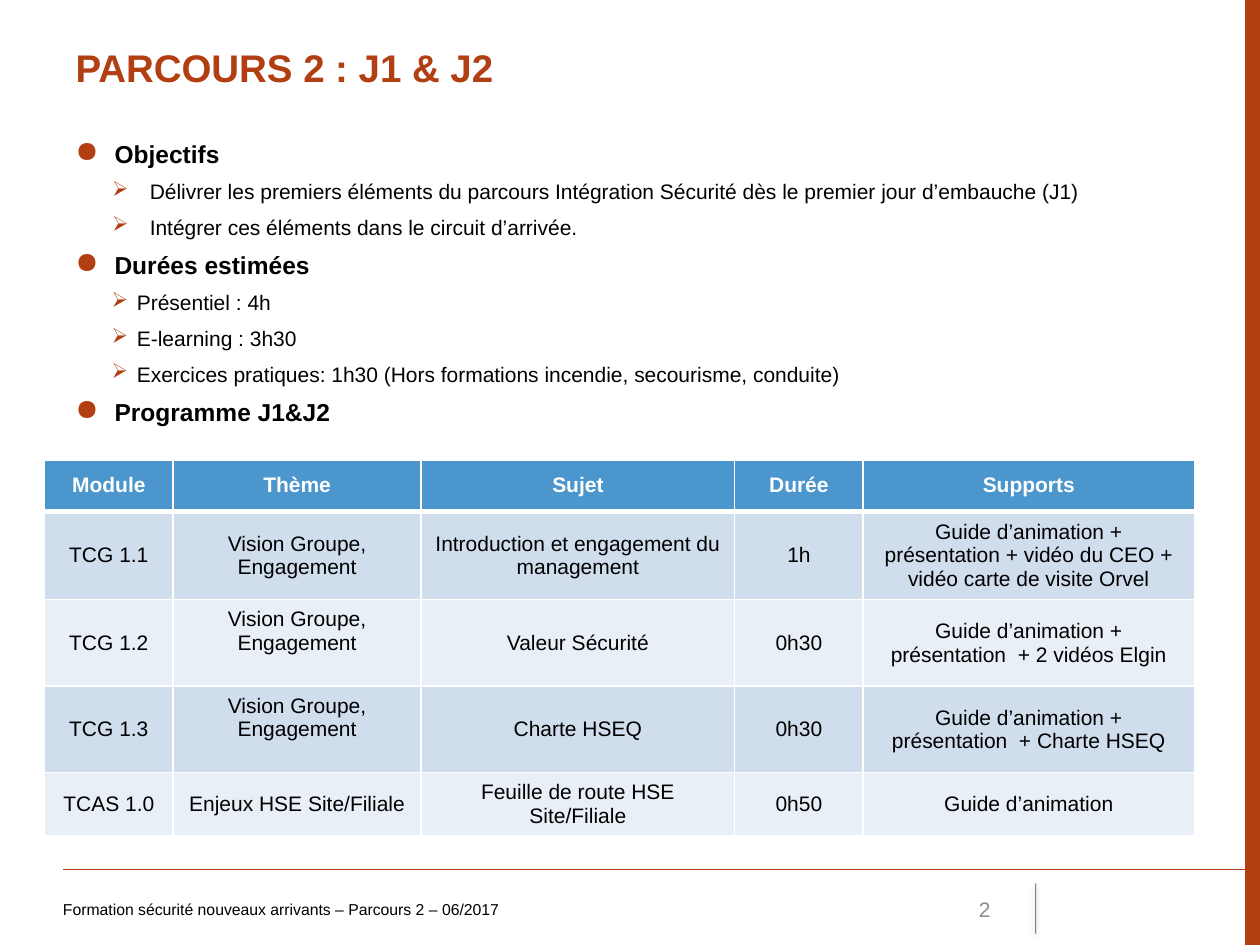
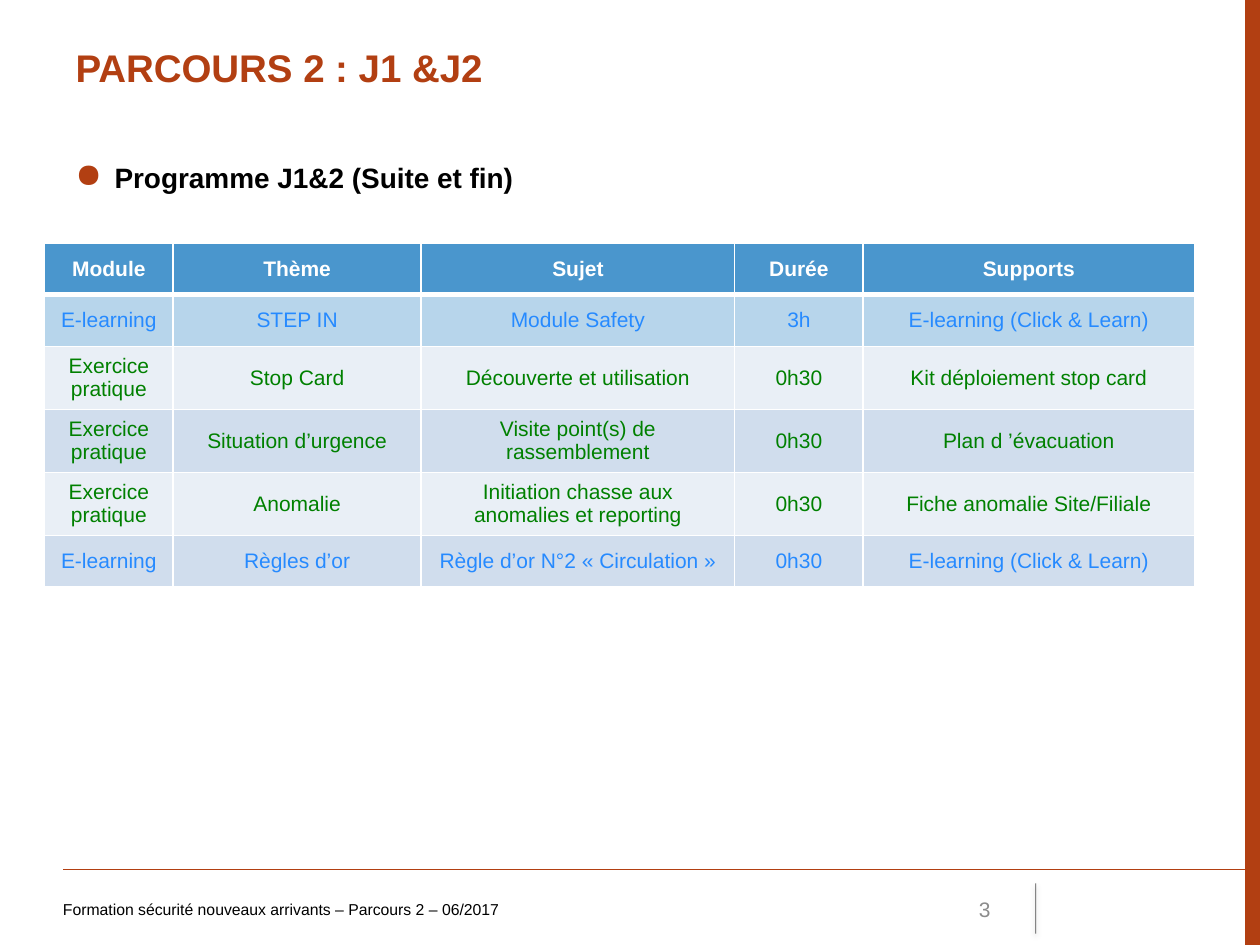
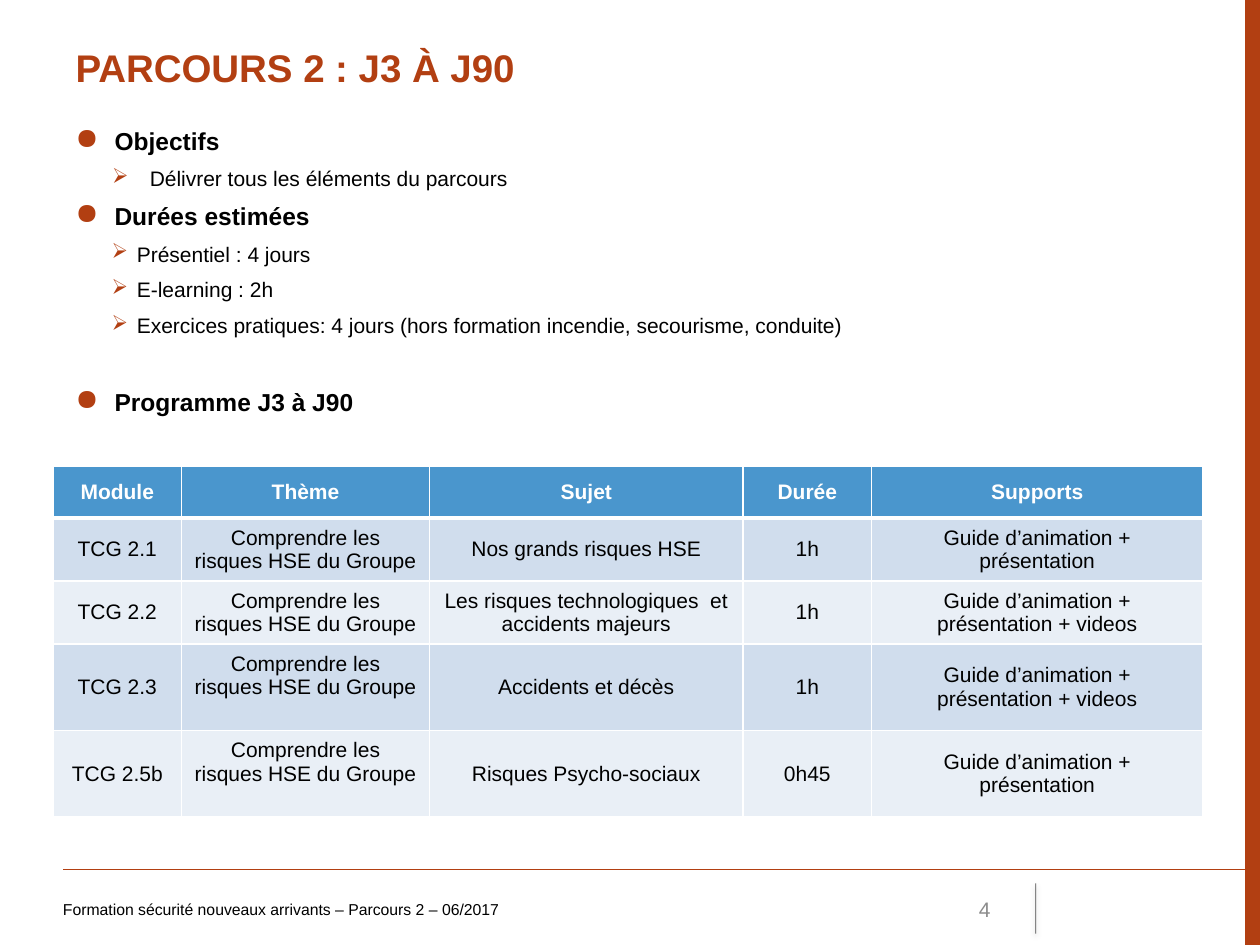
from lxml import etree
from pptx import Presentation
from pptx.dml.color import RGBColor
from pptx.enum import shapes, text
from pptx.oxml import parse_xml
from pptx.oxml.ns import nsdecls
from pptx.util import Cm, Pt

RUST = RGBColor(0xB2, 0x3F, 0x12)
BLACK = RGBColor(0, 0, 0)
WHITE = RGBColor(0xFF, 0xFF, 0xFF)
GREY = RGBColor(0x8C, 0x8C, 0x8C)
HEAD = RGBColor(0x4A, 0x96, 0xCD)
DARK = RGBColor(0xD0, 0xDD, 0xED)
LIGHT = RGBColor(0xE9, 0xEF, 0xF6)
SKY = RGBColor(0xB7, 0xD5, 0xEB)
HUES = {"E-learning": RGBColor(0x26, 0x8A, 0xFF),
        "Exercice pratique": RGBColor(0, 0x80, 0)}

FOOT = "Formation sécurité nouveaux arrivants – Parcours 2 – 06/2017"
HEADS = ("Module", "Thème", "Sujet", "Durée", "Supports")
COLS = (2.59, 5, 6.32, 2.59, 6.68)
FLAT, PAIR, TALL = 1.04, 1.2, 1.67  # row heights for one, two and three lines
RAISE = 0.6  # bottom margin that lifts a theme by half a line

# Bullet levels: left indent, hanging indent (cm), sign, size in percent
LEVELS = {"main": (0.79, 0.79, "●", 120),
          "wide": (1.5, 0.76, "➢", 100),
          "near": (1.24, 0.51, "➢", 100)}

VISION = "Vision Groupe,\nEngagement"
RISKS = "Comprendre les risques HSE du Groupe"
GUIDE = "Guide d’animation + présentation"
CLICK = "E-learning (Click & Learn)"

SLIDES = [
    dict(
        title="PARCOURS 2 : J1 & J2", top=2.67, size=14,
        points=[
            ("main", "Objectifs"),
            ("wide", "Délivrer les premiers éléments du parcours Intégration "
                     "Sécurité dès le premier jour d’embauche (J1)"),
            ("wide", "Intégrer ces éléments dans le circuit d’arrivée."),
            ("main", "Durées estimées"),
            ("near", "Présentiel : 4h"),
            ("near", "E-learning : 3h30"),
            ("near", "Exercices pratiques: 1h30 (Hors formations incendie, "
                     "secourisme, conduite)"),
            ("main", "Programme J1&J2")],
        at=(0.9, 9.27), first=DARK, lifted=(2, 3),
        highs=(FLAT, TALL, TALL, TALL, PAIR),
        rows=[
            ("TCG 1.1", VISION, "Introduction et engagement du management",
             "1h", GUIDE + " + vidéo du CEO + vidéo carte de visite Orvel"),
            ("TCG 1.2", VISION, "Valeur Sécurité", "0h30",
             GUIDE + "  + 2 vidéos Elgin"),
            ("TCG 1.3", VISION, "Charte HSEQ", "0h30",
             GUIDE + "  + Charte HSEQ"),
            ("TCAS 1.0", "Enjeux HSE Site/Filiale",
             "Feuille de route HSE Site/Filiale", "0h50",
             "Guide d’animation")]),
    dict(
        title="PARCOURS 2 : J1 &J2", top=3.12, size=16,
        points=[("main", "Programme J1&2 (Suite et fin)")],
        at=(0.9, 4.9), first=SKY, lifted=(),
        highs=(FLAT, FLAT, PAIR, PAIR, PAIR, FLAT),
        rows=[
            ("E-learning", "STEP IN", "Module Safety", "3h", CLICK),
            ("Exercice pratique", "Stop Card", "Découverte et utilisation",
             "0h30", "Kit déploiement stop card"),
            ("Exercice pratique", "Situation d’urgence",
             "Visite point(s) de rassemblement", "0h30",
             "Plan d ’évacuation"),
            ("Exercice pratique", "Anomalie",
             "Initiation chasse aux anomalies et reporting", "0h30",
             "Fiche anomalie Site/Filiale"),
            ("E-learning", "Règles d’or", "Règle d’or N°2 « Circulation »",
             "0h30", CLICK)]),
    dict(
        title="PARCOURS 2 : J3 À J90", top=2.41, size=14, gap=25,
        points=[
            ("main", "Objectifs"),
            ("wide", "Délivrer tous les éléments du parcours"),
            ("main", "Durées estimées"),
            ("near", "Présentiel : 4 jours"),
            ("near", "E-learning : 2h"),
            ("near", "Exercices pratiques: 4 jours (hors formation incendie, "
                     "secourisme, conduite)"),
            ("main", "Programme J3 à J90")],
        at=(1.07, 9.4), first=DARK, lifted=(3, 4),
        highs=(FLAT, PAIR, PAIR, TALL, TALL),
        rows=[
            ("TCG 2.1", RISKS, "Nos grands risques HSE", "1h", GUIDE),
            ("TCG 2.2", RISKS,
             "Les risques technologiques  et accidents majeurs", "1h",
             GUIDE + " + videos"),
            ("TCG 2.3", RISKS, "Accidents et décès", "1h",
             GUIDE + " + videos"),
            ("TCG 2.5b", RISKS, "Risques Psycho-sociaux", "0h45", GUIDE)]),
]


def put(obj, **vals):
    for key, val in vals.items():
        setattr(obj, key, val)


def write(par, words, size, hue, bold=False):
    run = par.add_run()
    run.text = words
    put(run.font, name="Arial", size=Pt(size), bold=bold)
    run.font.color.rgb = hue


def box(slide, x, y, w, h, **vals):
    frame = slide.shapes.add_textbox(Cm(x), Cm(y), Cm(w), Cm(h)).text_frame
    put(frame, word_wrap=True, **vals)
    return frame


def rule(slide, ends, hue, width, effect=""):
    line = slide.shapes.add_connector(shapes.MSO_CONNECTOR.STRAIGHT,
                                      *map(Cm, ends))
    line.line.color.rgb = hue
    line.line.width = Pt(width)
    line._element.spPr.append(parse_xml(
        f'<a:effectLst {nsdecls("a")}>{effect}</a:effectLst>'))
    return line


def alpha(pct):
    return f'<a:alpha val="{pct * 1000}"/>'


def frame_slide(slide, title, page):
    """Add what every slide shares: title, side band, rules and footer."""
    band = slide.shapes.add_shape(shapes.MSO_SHAPE.RECTANGLE,
                                  Cm(25.1), 0, Cm(0.3), Cm(19.05))
    band.shadow.inherit = False
    band.fill.solid()
    band.fill.fore_color.rgb = RUST
    band.line.fill.background()

    rule(slide, (1.27, 17.53, 25.4, 17.53), RUST, 0.75)
    shade = (f'<a:outerShdw blurRad="{Pt(3.1)}" dist="{Pt(1.6)}" '
             'dir="5400000" rotWithShape="0"><a:srgbClr val="000000">'
             f'{alpha(38)}</a:srgbClr></a:outerShdw>')
    mark = rule(slide, (20.88, 17.81, 20.88, 18.82), BLACK, 0.5, shade)
    tint = mark._element.spPr.find(".//{*}ln//{*}srgbClr")
    tint.append(parse_xml(alpha(70).replace("/>", f' {nsdecls("a")}/>')))

    head = slide.shapes.title
    put(head, left=Cm(1.27), top=Cm(0.76), width=Cm(22.83), height=Cm(1.75))
    put(head.text_frame, vertical_anchor=text.MSO_ANCHOR.TOP,
        auto_size=text.MSO_AUTO_SIZE.NONE)
    par = head.text_frame.paragraphs[0]
    par.alignment = text.PP_ALIGN.LEFT
    write(par, title, 22, RUST, True)

    middle = text.MSO_ANCHOR.MIDDLE
    foot = box(slide, 1.27, 17.81, 15.44, 1.02,
               vertical_anchor=middle, margin_left=0)
    write(foot.paragraphs[0], FOOT, 9, BLACK)
    number = box(slide, 18.21, 17.81, 2.01, 1.02, vertical_anchor=middle)
    number.paragraphs[0].alignment = text.PP_ALIGN.RIGHT
    write(number.paragraphs[0], str(page), 12, GREY)


def bullet(par, left, hang, sign, pct):
    props = par._p.get_or_add_pPr()
    props.set("marL", str(Cm(left)))
    props.set("indent", str(-Cm(hang)))
    for xml in (f'<a:buClr {nsdecls("a")}><a:srgbClr val="{RUST}"/></a:buClr>',
                f'<a:buSzPct {nsdecls("a")} val="{pct * 1000}"/>',
                f'<a:buChar {nsdecls("a")} char="{sign}"/>'):
        props.append(parse_xml(xml))


def add_points(slide, data):
    points = data["points"]
    frame = box(slide, 1.27, data["top"], 22.83, 1.2 if len(points) == 1 else 6)
    for i, (level, words) in enumerate(points):
        par = frame.add_paragraph() if i else frame.paragraphs[0]
        bullet(par, *LEVELS[level])
        par.space_after = Pt(3)
        if i:
            last = i == len(points) - 1
            par.space_before = Pt(data.get("gap", 3) if last else 3)
        main = level == "main"
        write(par, words, data["size"] if main else 12, BLACK, main)


def edge(cell, row):
    """Draw white borders, thick between the heading and the first row."""
    props = cell._tc.get_or_add_tcPr()
    thick = {"T": row == 1, "B": row == 0}
    for side in "LRTB":
        width = Pt(3 if thick.get(side) else 1)
        props.append(parse_xml(
            f'<a:ln{side} {nsdecls("a")} w="{width}"><a:solidFill>'
            f'<a:srgbClr val="{WHITE}"/></a:solidFill></a:ln{side}>'))


def add_grid(slide, data):
    rows = [HEADS] + data["rows"]
    x, y = data["at"]
    grid = slide.shapes.add_table(
        len(rows), len(COLS), Cm(x), Cm(y),
        Cm(sum(COLS)), Cm(sum(data["highs"]))).table
    for col, width in zip(grid.columns, COLS):
        col.width = Cm(width)
    for r, row in enumerate(rows):
        grid.rows[r].height = Cm(data["highs"][r])
        fill = (HEAD, data["first"])[r] if r < 2 else (LIGHT, DARK)[r % 2]
        hue = HUES.get(row[0], BLACK) if r else WHITE
        for c, words in enumerate(row):
            cell = grid.cell(r, c)
            edge(cell, r)
            cell.fill.solid()
            cell.fill.fore_color.rgb = fill
            cell.vertical_anchor = text.MSO_ANCHOR.MIDDLE
            if c == 1 and r in data["lifted"]:
                cell.margin_bottom = Cm(RAISE)
            frame = cell.text_frame
            for i, part in enumerate(words.split("\n")):
                par = frame.add_paragraph() if i else frame.paragraphs[0]
                par.alignment = text.PP_ALIGN.CENTER
                write(par, part, 12, hue, r == 0)


def main():
    deck = Presentation()
    put(deck, slide_width=Cm(25.4), slide_height=Cm(19.05))
    for page, data in enumerate(SLIDES, 2):
        slide = deck.slides.add_slide(deck.slide_layouts[5])
        frame_slide(slide, data["title"], page)
        add_points(slide, data)
        add_grid(slide, data)
    deck.save("out.pptx")


if __name__ == "__main__":
    main()
